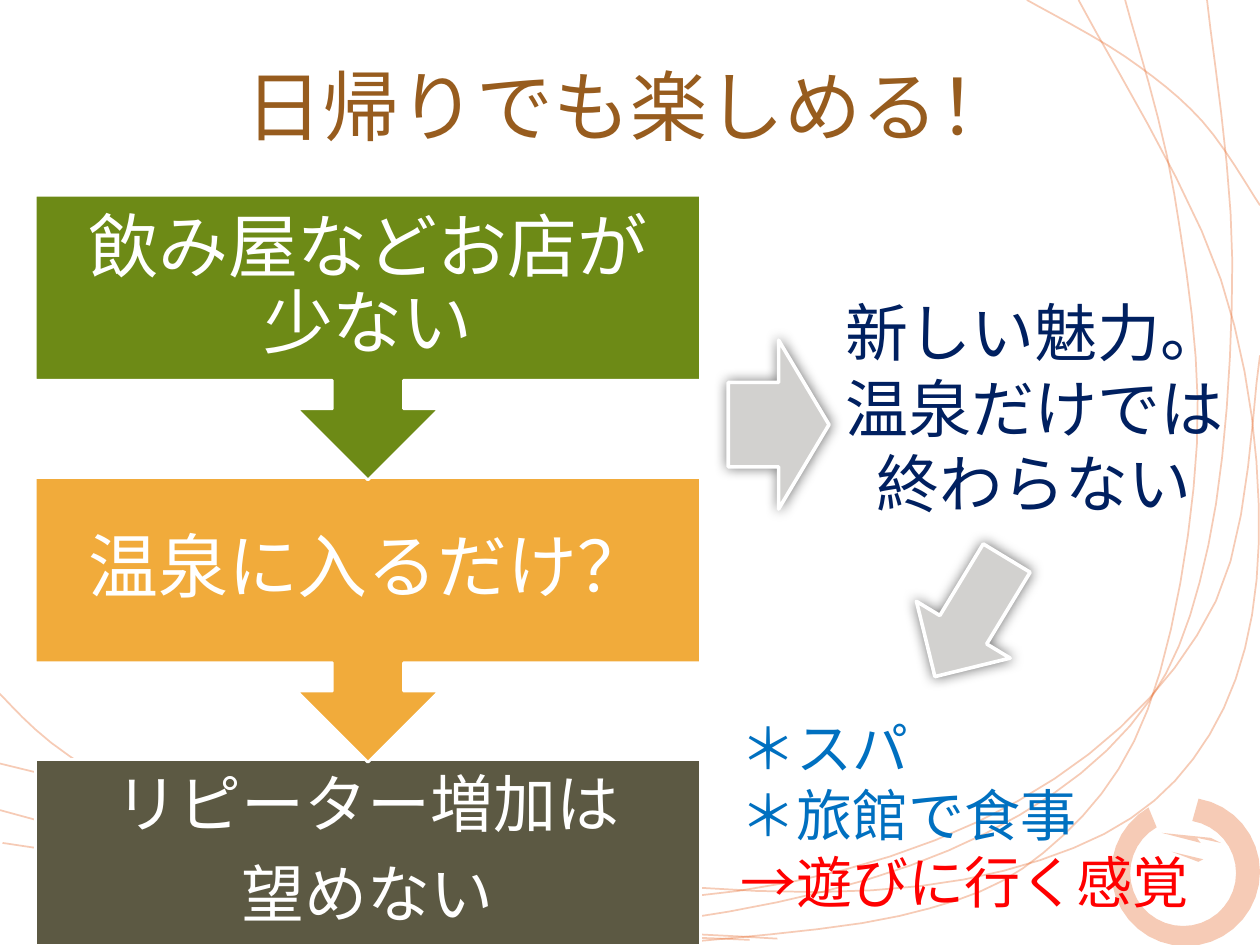
from math import cos, radians, sin
from typing import NamedTuple, Optional

from lxml.etree import SubElement
from pptx import Presentation
from pptx.dml.color import RGBColor
from pptx.enum.shapes import MSO_SHAPE as Preset
from pptx.enum.text import MSO_ANCHOR as Anchor, MSO_AUTO_SIZE as AutoSize, PP_ALIGN as Align
from pptx.oxml.ns import qn
from pptx.util import Inches, Pt

ORANGE = RGBColor(0xE3, 0x56, 0x0E)
BROWN = RGBColor(0x97, 0x5C, 0x1E)
GREEN = RGBColor(0x6D, 0x8A, 0x16)
AMBER = RGBColor(0xF1, 0xAB, 0x3B)
OLIVE = RGBColor(0x5C, 0x59, 0x43)
GREY = RGBColor(0xD2, 0xD1, 0xCF)
NAVY = RGBColor(0x00, 0x20, 0x60)
BLUE = RGBColor(0x00, 0x70, 0xC0)
RED = RGBColor(0xFF, 0x00, 0x00)
WHITE = RGBColor(0xFF, 0xFF, 0xFF)
FONT = "Calibri"


class Box(NamedTuple):
    left: float
    top: float
    width: float
    height: float

    def emu(self) -> list:
        return [Inches(value) for value in self]


class Step(NamedTuple):
    lines: list
    color: RGBColor
    size: int
    inset: float
    preset: Preset


class BlockArrow(NamedTuple):
    box: Box
    rotation: float


STEP_LEFT, STEP_TOP, STEP_PITCH = 0.28, 1.55, 2.24
STEP_WIDTH, STEP_HEIGHT, CALLOUT_HEIGHT = 5.28, 1.47, 2.26
STEPS = [
    Step(["飲み屋などお店が少ない"], GREEN, 40, 0.31, Preset.UP_ARROW_CALLOUT),
    Step(["温泉に入るだけ？"], AMBER, 40, 0.31, Preset.UP_ARROW_CALLOUT),
    Step(["リピーター増加は", "望めない"], OLIVE, 36, 0.28, Preset.RECTANGLE),
]
ARROWS = [
    BlockArrow(Box(5.51, 2.97, 1.34, 0.8), 270),
    BlockArrow(Box(7.27, 4.35, 0.87, 1.1), 31.2),
]

# Points that each decorative curve passes through, in inches.
CURVES = [
    [(-0.03, 5.48), (0.55, 6), (1.85, 6.75), (3.38, 7.25), (6.17, 7.45)],
    [(5.23, 7.5), (7.14, 7.27), (8.28, 6.77), (9.11, 5.63), (9.5, 3.52), (9.32, 1.54),
     (8.93, 0)],
    [(0, 6.06), (3.11, 6.77), (6.49, 7.08), (8.52, 6.73), (9.6, 5.83), (9.99, 4.31),
     (9.69, 2.22), (8.56, 0)],
    [(0.02, 6.69), (3.45, 7.15), (6.28, 7), (8.37, 6.18), (9.65, 4.77), (10, 2.82)],
    [(2.63, 7.46), (5.38, 7.3), (7.53, 6.75), (8.97, 5.76), (9.59, 4.33), (9.78, 2.07),
     (9.58, 0)],
    [(8.15, 0), (8.93, 0.45), (9.54, 0.96), (10, 1.63)],
    [(0, 6.43), (2.11, 6.99), (4.05, 7.35), (5.95, 7.46)],
]
CURVE_STEPS = 6
BRUSH_TAILS = [
    [(9.22, 6.61), (9.61, 6.65), (9.69, 6.69), (9.5, 6.65), (9.53, 6.69)],
    [(9.3, 6.76), (9.55, 6.82), (9.51, 6.84)],
]


def smooth_curve(knots: list) -> list:
    """Sample a Catmull-Rom spline through the knots."""
    padded = [knots[0], *knots, knots[-1]]
    points = [knots[0]]
    for before, start, end, after in zip(padded, padded[1:], padded[2:], padded[3:]):
        for step in range(1, CURVE_STEPS + 1):
            t = step / CURVE_STEPS
            points.append(tuple(
                b + t * (c - a) / 2 + t**2 * (a - 2.5 * b + 2 * c - d / 2)
                + t**3 * (3 * (b - c) + d - a) / 2
                for a, b, c, d in zip(before, start, end, after)))
    return points


def arc(center: tuple, radius: float, angles: range) -> list:
    x, y = center
    return [(x + radius * cos(radians(angle)), y + radius * sin(radians(angle)))
            for angle in angles]


def brush_ring() -> list:
    """Outline an open ring, thick at the bottom, with its gap at the top left."""
    outer = arc((9.41, 6.92), 0.59, range(-80, 241, 10))
    inner = arc((9.39, 6.93), 0.42, range(240, -81, -10))
    return outer + inner


def set_opacity(shape, percent: int) -> None:
    for color in shape._element.spPr.iter(qn("a:srgbClr")):
        SubElement(color, qn("a:alpha"), val=str(percent * 1000))


def draw_outline(slide, points: list, closed: bool) -> None:
    """Draw a filled outline when closed, otherwise a thin open line."""
    start, *rest = [(Inches(x), Inches(y)) for x, y in points]
    builder = slide.shapes.build_freeform(*start)
    builder.add_line_segments(rest, close=closed)
    shape = builder.convert_to_shape()
    shape.shadow.inherit = False
    if closed:
        shape.fill.solid()
        shape.fill.fore_color.rgb = ORANGE
        shape.line.fill.background()
    else:
        shape.fill.background()
        shape.line.color.rgb = ORANGE
        shape.line.width = Pt(1)
    set_opacity(shape, 30 if closed else 29)


def draw_preset(slide, preset: Preset, box: Box, color: RGBColor, line_width: float,
                rotation: float = 0):
    shape = slide.shapes.add_shape(preset, *box.emu())
    shape.shadow.inherit = False
    shape.rotation = rotation
    shape.fill.solid()
    shape.fill.fore_color.rgb = color
    shape.line.color.rgb = WHITE
    shape.line.width = Pt(line_width)
    return shape


def write_text(frame, lines: list, *, size: int, colors: list, align: Align = Align.CENTER,
               anchor: Anchor = Anchor.TOP, inset: Optional[float] = None,
               line_spacing: Optional[float] = None, space_after: Optional[float] = None,
               grow: bool = False) -> None:
    """Write one paragraph per line; the last colour serves any remaining lines."""
    frame.word_wrap = True
    frame.vertical_anchor = anchor
    frame.auto_size = AutoSize.SHAPE_TO_FIT_TEXT if grow else AutoSize.NONE
    if inset is not None:
        frame.margin_left = frame.margin_right = Inches(inset)
        frame.margin_top = frame.margin_bottom = Inches(inset)
    for index, line in enumerate(lines):
        paragraph = frame.add_paragraph() if index else frame.paragraphs[0]
        paragraph.alignment = align
        if line_spacing is not None:
            paragraph.line_spacing = line_spacing
        if space_after is not None:
            paragraph.space_after = Pt(space_after)
        run = paragraph.add_run()
        run.text = line
        run.font.name = FONT
        run.font.size = Pt(size)
        run.font.color.rgb = colors[min(index, len(colors) - 1)]


def add_text(slide, box: Box, lines: list, **text_format) -> None:
    write_text(slide.shapes.add_textbox(*box.emu()).text_frame, lines, **text_format)


def draw_step(slide, step: Step, top: float) -> None:
    is_callout = step.preset == Preset.UP_ARROW_CALLOUT
    text_box = Box(STEP_LEFT, top, STEP_WIDTH, STEP_HEIGHT)
    shape_box = text_box._replace(height=CALLOUT_HEIGHT) if is_callout else text_box
    draw_preset(slide, step.preset, shape_box, step.color, 1.54, 180 if is_callout else 0)
    add_text(slide, text_box, step.lines, size=step.size, colors=[WHITE], anchor=Anchor.MIDDLE,
             inset=step.inset, line_spacing=0.9, space_after=step.size * 0.35)


def draw_block_arrow(slide, arrow: BlockArrow) -> None:
    shape = draw_preset(slide, Preset.DOWN_ARROW, arrow.box, GREY, 2.07, arrow.rotation)
    effects = shape._element.spPr.find(qn("a:effectLst"))
    shadow = SubElement(effects, qn("a:outerShdw"), blurRad=str(Pt(7.5)), dist="0", dir="0",
                        algn="ctr", rotWithShape="0")
    color = SubElement(shadow, qn("a:srgbClr"), val="000000")
    SubElement(color, qn("a:alpha"), val="55000")


def main() -> None:
    presentation = Presentation()
    presentation.slide_width, presentation.slide_height = Inches(10), Inches(7.5)
    slide = presentation.slides.add_slide(presentation.slide_layouts[5])
    title = slide.shapes.title
    for knots in CURVES:
        draw_outline(slide, smooth_curve(knots), closed=False)
    for points in [brush_ring(), *BRUSH_TAILS]:
        draw_outline(slide, points, closed=True)

    slide.shapes._spTree.append(title._element)  # title in front of the curves
    title.left, title.top, title.width, title.height = Box(0.51, 0.21, 9, 1.25).emu()
    write_text(title.text_frame, ["日帰りでも楽しめる！"], size=44, colors=[BROWN],
               anchor=Anchor.MIDDLE)

    for index, step in reversed(list(enumerate(STEPS))):
        draw_step(slide, step, STEP_TOP + index * STEP_PITCH)
    for arrow in ARROWS:
        draw_block_arrow(slide, arrow)
    add_text(slide, Box(6.42, 2.28, 3.58, 1.92), ["新しい魅力。", "温泉だけでは終わらない"],
             size=36, colors=[NAVY], grow=True)
    add_text(slide, Box(5.78, 5.61, 4.22, 1.72), ["＊スパ", "＊旅館で食事", "→遊びに行く感覚"],
             size=32, colors=[BLUE, BLUE, RED], align=Align.LEFT, grow=True)
    presentation.save("out.pptx")


if __name__ == "__main__":
    main()
